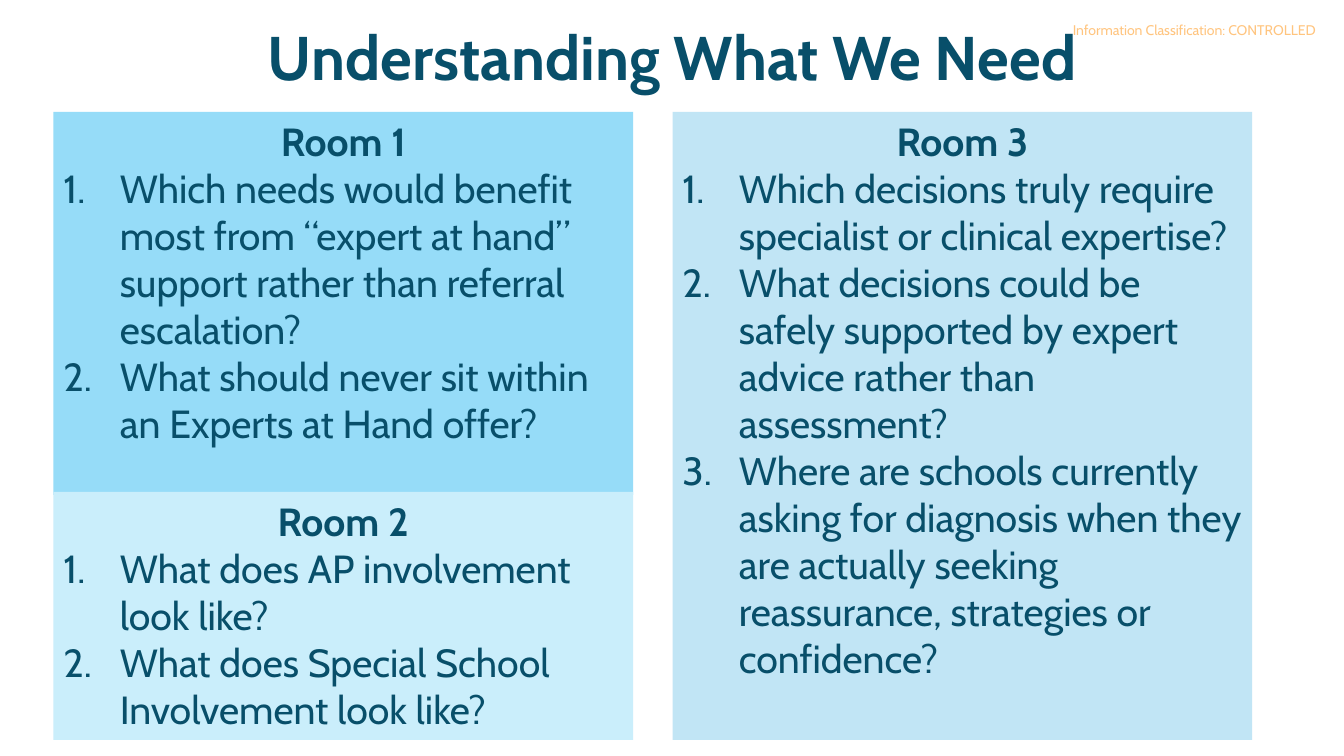
from dataclasses import dataclass

from lxml import etree
from pptx import Presentation
from pptx.dml.color import RGBColor
from pptx.enum import shapes, text
from pptx.oxml import ns
from pptx.slide import Slide
from pptx.util import Inches, Pt

FONT = "Cabin"
TEAL = RGBColor(0x08, 0x4F, 0x6A)
ORANGE = RGBColor(0xFF, 0x8C, 0x00)
SKY = RGBColor(0x96, 0xDC, 0xF8)
MIST = RGBColor(0xC1, 0xE5, 0xF5)
ICE = RGBColor(0xCA, 0xEE, 0xFB)
LEFT, RIGHT, WIDTH = 0.53, 6.67, 5.75
INDENT = Inches(0.56)


@dataclass
class Room:
    name: str
    left: float
    top: float
    height: float
    fill: RGBColor
    asks: list[str]


ROOMS = [
    Room("Room 1", LEFT, 1.11, 3.8, SKY, [
        "Which needs would benefit most from “expert at hand” support rather than referral escalation?",
        "What should never sit within an Experts at Hand offer?",
    ]),
    Room("Room 3", RIGHT, 1.11, 6.23, MIST, [
        "Which decisions truly require specialist or clinical expertise?",
        "What decisions could be safely supported by expert advice rather than assessment?",
        "Where are schools currently asking for diagnosis when they are actually seeking "
        "reassurance, strategies or confidence?",
    ]),
    Room("Room 2", LEFT, 4.88, 2.46, ICE, [
        "What does AP involvement look like?",
        "What does Special School Involvement look like?",
    ]),
]


def style(para, size: float, color: RGBColor, bold: bool = False) -> None:
    font = para.font
    font.name, font.size, font.bold = FONT, Pt(size), bold
    font.color.rgb = color


def number(para) -> None:
    props = para._p.get_or_add_pPr()
    props.set("marL", str(INDENT))
    props.set("indent", str(-INDENT))
    etree.SubElement(props, ns.qn("a:buFont"), typeface="+mj-lt")
    etree.SubElement(props, ns.qn("a:buAutoNum"), type="arabicPeriod")


def add_label(slide: Slide) -> None:
    box = slide.shapes.add_textbox(Inches(10.64), Inches(0.21), Inches(2.51), Inches(0.17))
    frame = box.text_frame
    frame.margin_left = frame.margin_right = frame.margin_top = frame.margin_bottom = 0
    para = frame.paragraphs[0]
    para.text = "Information Classification: CONTROLLED"
    style(para, 10, ORANGE)
    color = para._p.pPr.find(".//" + ns.qn("a:srgbClr"))
    etree.SubElement(color, ns.qn("a:alpha"), val="50000")
    slide.shapes.title._element.addprevious(box._element)


def add_title(slide: Slide) -> None:
    title = slide.shapes.title
    title.left, title.top = Inches(0.92), Inches(-0.12)
    title.width, title.height = Inches(11.5), Inches(1.45)
    frame = title.text_frame
    frame.auto_size = text.MSO_AUTO_SIZE.NONE
    frame.vertical_anchor = text.MSO_ANCHOR.MIDDLE
    para = frame.paragraphs[0]
    para.text = "Understanding What We Need"
    para.alignment = text.PP_ALIGN.CENTER
    para.line_spacing = 0.9
    style(para, 44, TEAL, True)


def add_room(slide: Slide, room: Room) -> None:
    panel = slide.shapes.add_shape(
        shapes.MSO_SHAPE.RECTANGLE,
        Inches(room.left), Inches(room.top), Inches(WIDTH), Inches(room.height))
    panel.name = room.name
    panel.shadow.inherit = False
    panel.fill.solid()
    panel.fill.fore_color.rgb = room.fill
    panel.line.fill.background()
    frame = panel.text_frame
    frame.word_wrap = True
    frame.vertical_anchor = text.MSO_ANCHOR.TOP
    head = frame.paragraphs[0]
    head.text = room.name
    head.alignment = text.PP_ALIGN.CENTER
    style(head, 28, TEAL, True)
    for ask in room.asks:
        para = frame.add_paragraph()
        para.text = ask
        para.alignment = text.PP_ALIGN.LEFT
        number(para)
        style(para, 28, TEAL)


def main() -> None:
    deck = Presentation()
    deck.slide_width, deck.slide_height = Inches(13.33), Inches(7.5)
    slide = deck.slides.add_slide(deck.slide_layouts.get_by_name("Title Only"))
    add_label(slide)
    add_title(slide)
    for room in ROOMS:
        add_room(slide, room)
    deck.save("out.pptx")


if __name__ == "__main__":
    main()
